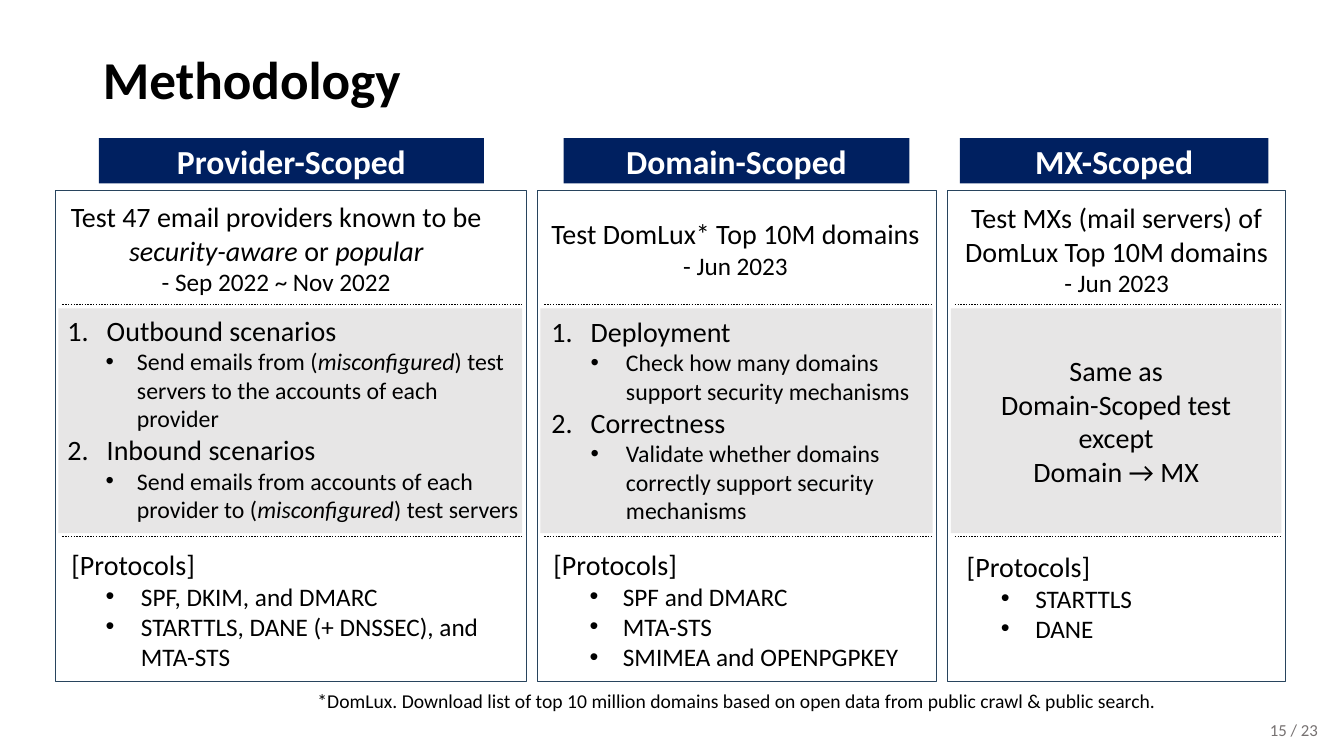
from dataclasses import dataclass

from lxml.etree import SubElement
from pptx import Presentation
from pptx.dml.color import RGBColor
from pptx.enum.dml import MSO_LINE
from pptx.enum.shapes import MSO_CONNECTOR, MSO_SHAPE
from pptx.enum.text import MSO_ANCHOR, MSO_AUTO_SIZE, PP_ALIGN
from pptx.oxml.ns import qn
from pptx.util import Emu, Pt

PX = 9144  # 100 px to the inch


@dataclass(frozen=True)
class Theme:
    font: str = "Calibri"
    ink: str = "000000"
    white: str = "FFFFFF"
    navy: str = "002060"
    edge: str = "28445D"
    band: str = "E7E6E6"
    faint: str = "767171"
    title: int = 38
    header: int = 24
    lead: int = 20
    item: int = 18
    sub: int = 17
    note: int = 14
    page: int = 12


T = Theme()

# Paragraph kinds: size, alignment, bullet
KINDS = {
    "head": (T.lead, PP_ALIGN.CENTER, None),
    "date": (T.item, PP_ALIGN.CENTER, None),
    "num": (T.lead, PP_ALIGN.LEFT, "num"),
    "sub": (T.sub, PP_ALIGN.LEFT, "dot"),
    "label": (T.lead, PP_ALIGN.LEFT, None),
    "item": (T.item, PP_ALIGN.LEFT, "dot"),
    "note": (T.note, PP_ALIGN.LEFT, None),
}

# Each column: frame (x, w), header (name, x, w), then text boxes
# (x, y, w, h, bullet indent, bullet hang, paragraphs); _x_ is italic
COLUMNS = [
    ((55, 467), ("Provider-Scoped", 98, 382), [
        (57, 193, 434, 108, 0, 0, [
            ("head", "Test 47 email providers known to be _security-aware_ or _popular_"),
            ("date", "- Sep 2022 ~ Nov 2022")]),
        (57, 306, 472, 220, 69, 31, [
            ("num", "Outbound scenarios"),
            ("sub", "Send emails from (_misconfigured_) test servers "
                    "to the accounts of each provider"),
            ("num", "Inbound scenarios"),
            ("sub", "Send emails from accounts of each provider "
                    "to (_misconfigured_) test servers")]),
        (61, 538, 440, 135, 69, 35, [
            ("label", "[Protocols]"),
            ("item", "SPF, DKIM, and DMARC"),
            ("item", "STARTTLS, DANE (+ DNSSEC), and MTA-STS")]),
    ]),
    ((533, 396), ("Domain-Scoped", 559, 343), [
        (534, 210, 391, 74, 0, 0, [
            ("head", "Test DomLux* Top 10M domains"),
            ("date", "- Jun 2023")]),
        (537, 307, 405, 229, 74, 35, [
            ("num", "Deployment"),
            ("sub", "Check how many domains support security mechanisms"),
            ("num", "Correctness"),
            ("sub", "Validate whether domains correctly support security mechanisms")]),
        (539, 538, 413, 135, 69, 33, [
            ("label", "[Protocols]"),
            ("item", "SPF and DMARC"),
            ("item", "MTA-STS"),
            ("item", "SMIMEA and OPENPGPKEY")]),
    ]),
    ((940, 335), ("MX-Scoped", 952, 306), [
        (940, 194, 335, 108, 0, 0, [
            ("head", "Test MXs (mail servers) of DomLux Top 10M domains"),
            ("date", "- Jun 2023")]),
        (951, 346, 312, 145, 0, 0, [
            ("head", "Same as"),
            ("head", "Domain-Scoped test"),
            ("head", "except"),
            ("head", "Domain → MX")]),
        (949, 540, 267, 104, 68, 34, [
            ("label", "[Protocols]"),
            ("item", "STARTTLS"),
            ("item", "DANE")]),
    ]),
]


def px(*vals):
    return [Emu(v * PX) for v in vals]


def rgb(code):
    return RGBColor.from_string(code)


def style(para, size, color=T.ink, bold=False, align=PP_ALIGN.LEFT):
    para.alignment = align
    font = para.font
    font.name, font.size, font.bold = T.font, Pt(size), bold
    font.color.rgb = rgb(color)


def bullet(para, kind, left, hang):
    props = para._p.get_or_add_pPr()
    props.set("marL", str(left * PX))
    props.set("indent", str(-hang * PX))
    if kind == "num":
        SubElement(props, qn("a:buFont"), typeface="+mj-lt")
        SubElement(props, qn("a:buAutoNum"), type="arabicPeriod")
    else:
        para.level = 1
        SubElement(props, qn("a:buFont"), typeface="Arial")
        SubElement(props, qn("a:buChar"), char="•")


def add_rect(slide, x, y, w, h, fill=None, edge=None):
    rect = slide.shapes.add_shape(MSO_SHAPE.RECTANGLE, *px(x, y, w, h))
    rect.shadow.inherit = False
    if fill:
        rect.fill.solid()
        rect.fill.fore_color.rgb = rgb(fill)
    else:
        rect.fill.background()
    if edge:
        rect.line.color.rgb = rgb(edge)
        rect.line.width = Pt(1)
    else:
        rect.line.fill.background()
    return rect


def add_rule(slide, x, end, y):
    rule = slide.shapes.add_connector(MSO_CONNECTOR.STRAIGHT, *px(x, y, end, y))
    rule.line.color.rgb = rgb(T.ink)
    rule.line.width = Pt(1)
    rule.line.dash_style = MSO_LINE.ROUND_DOT
    SubElement(rule._element.spPr, qn("a:effectLst"))


def add_text(slide, x, y, w, h, left, hang, paras):
    frame = slide.shapes.add_textbox(*px(x, y, w, h)).text_frame
    frame.word_wrap = True
    for i, (kind, text) in enumerate(paras):
        para = frame.add_paragraph() if i else frame.paragraphs[0]
        size, align, mark = KINDS[kind]
        if mark == "num":
            bullet(para, mark, 39, 39)
        elif mark:
            bullet(para, mark, left, hang)
        style(para, size, align=align)
        for n, part in enumerate(text.split("_")):
            if part:
                run = para.add_run()
                run.text = part
                if n % 2:
                    run.font.italic = True
    return frame


def add_header(slide, name, x, w):
    frame = add_rect(slide, x, 137, w, 45, fill=T.navy).text_frame
    frame.vertical_anchor = MSO_ANCHOR.MIDDLE
    frame.text = name
    style(frame.paragraphs[0], T.header, T.white, True, PP_ALIGN.CENTER)


def add_column(slide, box, header, texts):
    x, w = box
    add_rect(slide, x + 3, 306, w - 7, 223, fill=T.band)
    add_header(slide, *header)
    add_rect(slide, x, 189, w, 487, edge=T.edge)
    for y in (302, 532):
        add_rule(slide, x + 7, x + w - 5, y)
    for text in texts:
        add_text(slide, *text)


def set_title(slide, text):
    title = slide.shapes.title
    title.left, title.top, title.width, title.height = px(92, 37, 1150, 89)
    frame = title.text_frame
    frame.text = text
    frame.auto_size = MSO_AUTO_SIZE.NONE
    frame.vertical_anchor = MSO_ANCHOR.MIDDLE
    para = frame.paragraphs[0]
    para.line_spacing = 0.9
    style(para, T.title, bold=True)


def main():
    deck = Presentation()
    deck.slide_width, deck.slide_height = px(1333, 750)
    slide = deck.slides.add_slide(deck.slide_layouts[5])
    set_title(slide, "Methodology")
    for column in COLUMNS:
        add_column(slide, *column)

    # Footnote and page number
    add_text(slide, 305, 679, 911, 34, 0, 0, [
        ("note", "*DomLux. Download list of top 10 million domains based on "
                 "open data from public crawl & public search.")])
    page = add_text(slide, 1017, 704, 300, 40, 0, 0, [("note", "15 / 23")])
    page.vertical_anchor = MSO_ANCHOR.MIDDLE
    style(page.paragraphs[0], T.page, T.faint, align=PP_ALIGN.RIGHT)
    deck.save("out.pptx")


if __name__ == "__main__":
    main()
